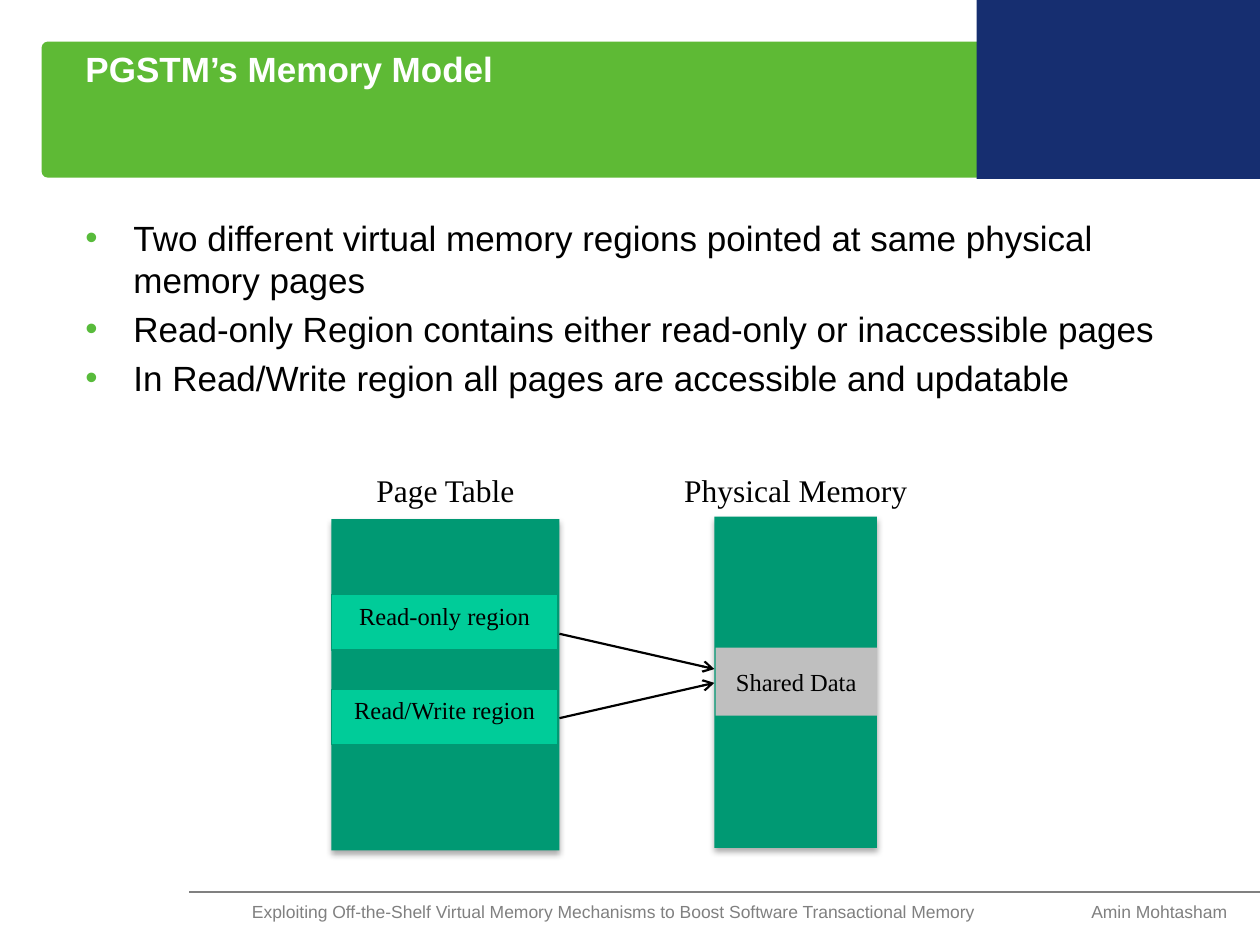
from pptx import Presentation
from pptx import util as u
from pptx.dml import color
from pptx.enum import shapes, text
from pptx.oxml import parse_xml
from pptx.oxml import ns

COLORS = {
    "white": "FFFFFF", "black": "000000", "gray": "808080",
    "banner": "5EBA35", "navy": "162E70", "bullet": "58BB3B",
    "memory": "009973", "region": "00CC99", "shared": "BFBFBF",
}
SANS, SERIF = "Arial", "Times New Roman"
LEFT, CENTER = text.PP_ALIGN.LEFT, text.PP_ALIGN.CENTER
TOP, MIDDLE = text.MSO_ANCHOR.TOP, text.MSO_ANCHOR.MIDDLE


def rgb(name):
    return color.RGBColor.from_string(COLORS[name])


def set_font(font, name, size, ink, bold=False):
    font.name, font.size, font.bold = name, u.Pt(size), bold
    font.color.rgb = rgb(ink)


def write(shape, words, name, size, ink, align=LEFT, anchor=TOP, bold=False):
    frame = shape.text_frame
    frame.word_wrap, frame.vertical_anchor = True, anchor
    para = frame.paragraphs[0]
    para.text, para.alignment = words, align
    set_font(para.font, name, size, ink, bold)


def add_text_box(page, box, inset=True):
    shape = page.shapes.add_textbox(*map(u.Inches, box))
    frame = shape.text_frame
    frame.word_wrap = True
    if not inset:
        frame.margin_left = frame.margin_right = 0
        frame.margin_top = frame.margin_bottom = 0
    return shape


def add_block(page, box, fill, kind=shapes.MSO_SHAPE.RECTANGLE, outline=None):
    block = page.shapes.add_shape(kind, *map(u.Inches, box))
    block.shadow.inherit = False
    block.fill.solid()
    block.fill.fore_color.rgb = rgb(fill)
    if outline:
        block.line.color.rgb = rgb(outline)
        block.line.width = u.Pt(0.75)
    else:
        block.line.fill.background()
    return block


def add_line(page, start, end, ink, width, arrow=False):
    line = page.shapes.add_connector(
        shapes.MSO_CONNECTOR.STRAIGHT, *map(u.Inches, start + end))
    line.line.color.rgb = rgb(ink)
    line.line.width = u.Pt(width)
    properties = line._element.spPr
    if arrow:
        properties.find(ns.qn("a:ln")).append(
            parse_xml(f'<a:tailEnd {ns.nsdecls("a")} type="arrow"/>'))
    properties.append(parse_xml(f'<a:effectLst {ns.nsdecls("a")}/>'))


def drop_shadow(shape):
    effects = shape._element.spPr.find(ns.qn("a:effectLst"))
    effects.append(parse_xml(
        f'<a:outerShdw {ns.nsdecls("a")} blurRad="{u.Pt(3.5)}" dist="{u.Pt(2.2)}" '
        f'dir="5400000" rotWithShape="0"><a:srgbClr val="{COLORS["black"]}">'
        '<a:alpha val="32000"/></a:srgbClr></a:outerShdw>'))


def add_header(page, box, title):
    left, top, width, height = box
    banner = add_block(page, (left, top, 8.25, height), "banner",
                       shapes.MSO_SHAPE.ROUNDED_RECTANGLE)
    banner.adjustments[0] = 0.046
    add_block(page, (left + width - 2.25, 0, 2.25, top + height + 0.01), "navy")
    heading = add_text_box(page, (left + 0.25, top, 5.33, 1))
    write(heading, title, SANS, 20, "white", bold=True)


def add_bullets(page, box, items):
    frame = add_text_box(page, box).text_frame
    for index, item in enumerate(items):
        para = frame.add_paragraph() if index else frame.paragraphs[0]
        para.text = item
        if index:
            para.space_before = u.Pt(4)
        properties = para._p.get_or_add_pPr()
        properties.set("marL", str(u.Inches(0.38)))
        properties.set("indent", str(u.Inches(-0.38)))
        for element in (
                f'<a:buClr {ns.nsdecls("a")}><a:srgbClr val="{COLORS["bullet"]}"/></a:buClr>',
                f'<a:buFont {ns.nsdecls("a")} typeface="{SANS}"/>',
                f'<a:buChar {ns.nsdecls("a")} char="•"/>'):
            properties.append(parse_xml(element))
        set_font(para.font, SANS, 20, "black")


def add_memory(page, box, label, label_width):
    """Place a tall memory block with its caption centred above it."""
    left, top, width, height = box
    drop_shadow(add_block(page, box, "memory"))
    caption = add_text_box(
        page, (left + (width - label_width) / 2, 3.69, label_width, 0.4))
    write(caption, label, SERIF, 18, "black", CENTER)


def add_diagram(page, box):
    left, top, width, height = box
    table_width, memory_width, block_height = 1.81, 1.29, 2.63
    table_right = left + table_width
    memory_left = left + width - memory_width

    add_memory(page, (left, top + 0.02, table_width, block_height), "Page Table", 1.47)
    add_memory(page, (memory_left, top, memory_width, block_height),
               "Physical Memory", 2.08)

    shared = add_block(page, (memory_left + 0.01, top + 1.04, 1.28, 0.54), "shared")
    write(shared, "Shared Data", SERIF, 14, "black", CENTER, MIDDLE)

    regions = [("Read-only region", 0.62, 0.93, 1.21),
               ("Read/Write region", 1.37, 1.6, 1.32)]
    for label, offset, arrow_start, arrow_end in regions:
        region = add_block(page, (left, top + offset, 1.8, 0.44), "region",
                           outline="memory")
        write(region, label, SERIF, 14, "black", CENTER)
        add_line(page, (table_right, top + arrow_start),
                 (memory_left, top + arrow_end), "black", 1.25, arrow=True)


def add_footer(page, box, talk, author):
    left, top, width, height = box
    add_line(page, (left, top), (left + width, top), "gray", 0.75)
    for words, offset, span_width, align in [(talk, 0.5, 6.17, LEFT),
                                             (author, 7.07, 1.26, CENTER)]:
        note = add_text_box(page, (left + offset, top, span_width, height), inset=False)
        write(note, words, SANS, 10, "gray", align, MIDDLE)


def main():
    deck = Presentation()
    deck.slide_width, deck.slide_height = u.Inches(10), u.Inches(7.5)
    page = deck.slides.add_slide(deck.slide_layouts[6])
    add_header(page, (0.33, 0.33, 9.67, 1.08), "PGSTM’s Memory Model")
    add_bullets(page, (0.58, 1.67, 9.25, 1.83), [
        "Two different virtual memory regions pointed at same physical memory pages",
        "Read-only Region contains either read-only or inaccessible pages",
        "In Read/Write region all pages are accessible and updatable",
    ])
    add_diagram(page, (2.63, 4.1, 4.33, 2.65))
    add_footer(page, (1.5, 7.08, 8.5, 0.31),
               "Exploiting Off-the-Shelf Virtual Memory Mechanisms to Boost "
               "Software Transactional Memory", "Amin Mohtasham")
    deck.save("out.pptx")


if __name__ == "__main__":
    main()
